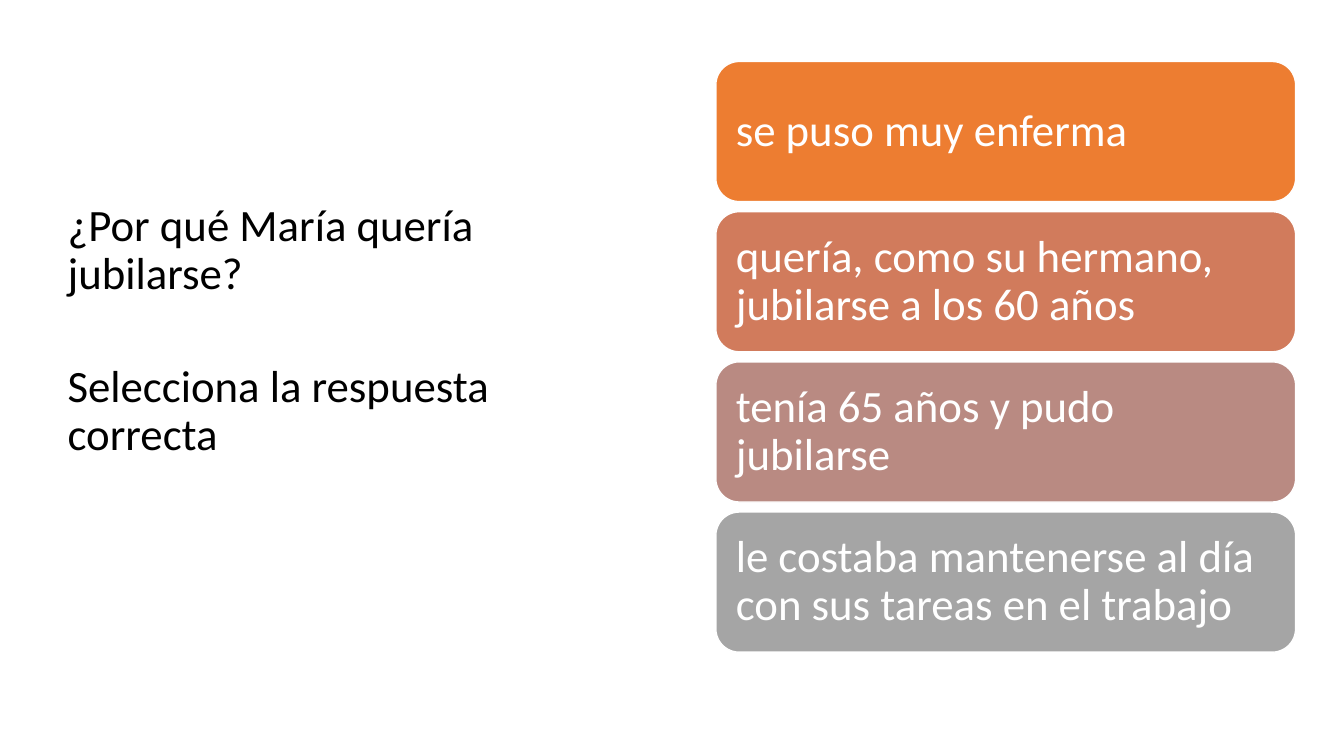
from dataclasses import dataclass

from pptx import Presentation
from pptx.dml.color import RGBColor
from pptx.enum.shapes import MSO_SHAPE
from pptx.enum.text import MSO_ANCHOR, MSO_AUTO_SIZE, PP_ALIGN
from pptx.slide import Slide
from pptx.text.text import TextFrame
from pptx.util import Emu, Pt

ROUNDED = MSO_SHAPE.ROUNDED_RECTANGLE
MIDDLE = MSO_ANCHOR.MIDDLE
LEFT = PP_ALIGN.LEFT
NO_AUTOFIT = MSO_AUTO_SIZE.NONE

EMU_PER_PX = 9144  # 100 px to the inch


@dataclass(frozen=True)
class Theme:
    font: str = "Calibri"
    text_size: int = 32
    line_spacing: float = 0.9
    question_gap: int = 46
    border_width: int = 1
    question_color: str = "000000"
    answer_color: str = "FFFFFF"
    border_color: str = "FFFFFF"


@dataclass(frozen=True)
class Answer:
    text: str
    fill: str


THEME = Theme()
QUESTION = ["¿Por qué María quería jubilarse?", "Selecciona la respuesta correcta"]
ANSWERS = [
    Answer("se puso muy enferma", "ED7D31"),
    Answer("quería, como su hermano, jubilarse a los 60 años", "D17B5C"),
    Answer("tenía 65 años y pudo jubilarse", "B98A82"),
    Answer("le costaba mantenerse al día con sus tareas en el trabajo", "A5A5A5"),
]

# Answer stack, in px
STACK_LEFT, STACK_TOP = 710, 61
CARD_WIDTH, CARD_HEIGHT, CARD_PITCH = 575, 139, 149
CARD_INSET = 13


def px(length: int) -> Emu:
    return Emu(length * EMU_PER_PX)


def format_text(frame: TextFrame, color: str) -> None:
    frame.word_wrap = True
    frame.auto_size = NO_AUTOFIT
    frame.vertical_anchor = MIDDLE
    for paragraph in frame.paragraphs:
        paragraph.alignment = LEFT
        paragraph.line_spacing = THEME.line_spacing
        for run in paragraph.runs:
            run.font.name = THEME.font
            run.font.size = Pt(THEME.text_size)
            run.font.color.rgb = RGBColor.from_string(color)


def draw_question(slide: Slide, lines: list[str]) -> None:
    question = slide.shapes.title
    question.left, question.top = px(57), px(68)
    question.width, question.height = px(567), px(602)
    frame = question.text_frame
    frame.text = "\n".join(lines)
    format_text(frame, THEME.question_color)
    frame.margin_bottom = px(85)  # lifts the question above the middle
    frame.paragraphs[1].space_before = Pt(THEME.question_gap)


def draw_answer(slide: Slide, answer: Answer, row: int) -> None:
    card = slide.shapes.add_shape(
        ROUNDED,
        px(STACK_LEFT),
        px(STACK_TOP + row * CARD_PITCH),
        px(CARD_WIDTH),
        px(CARD_HEIGHT),
    )
    card.shadow.inherit = False
    card.fill.solid()
    card.fill.fore_color.rgb = RGBColor.from_string(answer.fill)
    card.line.color.rgb = RGBColor.from_string(THEME.border_color)
    card.line.width = Pt(THEME.border_width)
    frame = card.text_frame
    frame.text = answer.text
    frame.margin_left = frame.margin_right = px(CARD_INSET)
    frame.margin_top = frame.margin_bottom = px(CARD_INSET)
    format_text(frame, THEME.answer_color)


def main() -> None:
    presentation = Presentation()
    presentation.slide_width, presentation.slide_height = px(1333), px(750)
    title_only = presentation.slide_layouts[5]
    slide = presentation.slides.add_slide(title_only)

    # Question on the left, possible answers on the right
    draw_question(slide, QUESTION)
    for row, answer in enumerate(ANSWERS):
        draw_answer(slide, answer, row)

    presentation.save("out.pptx")


if __name__ == "__main__":
    main()
